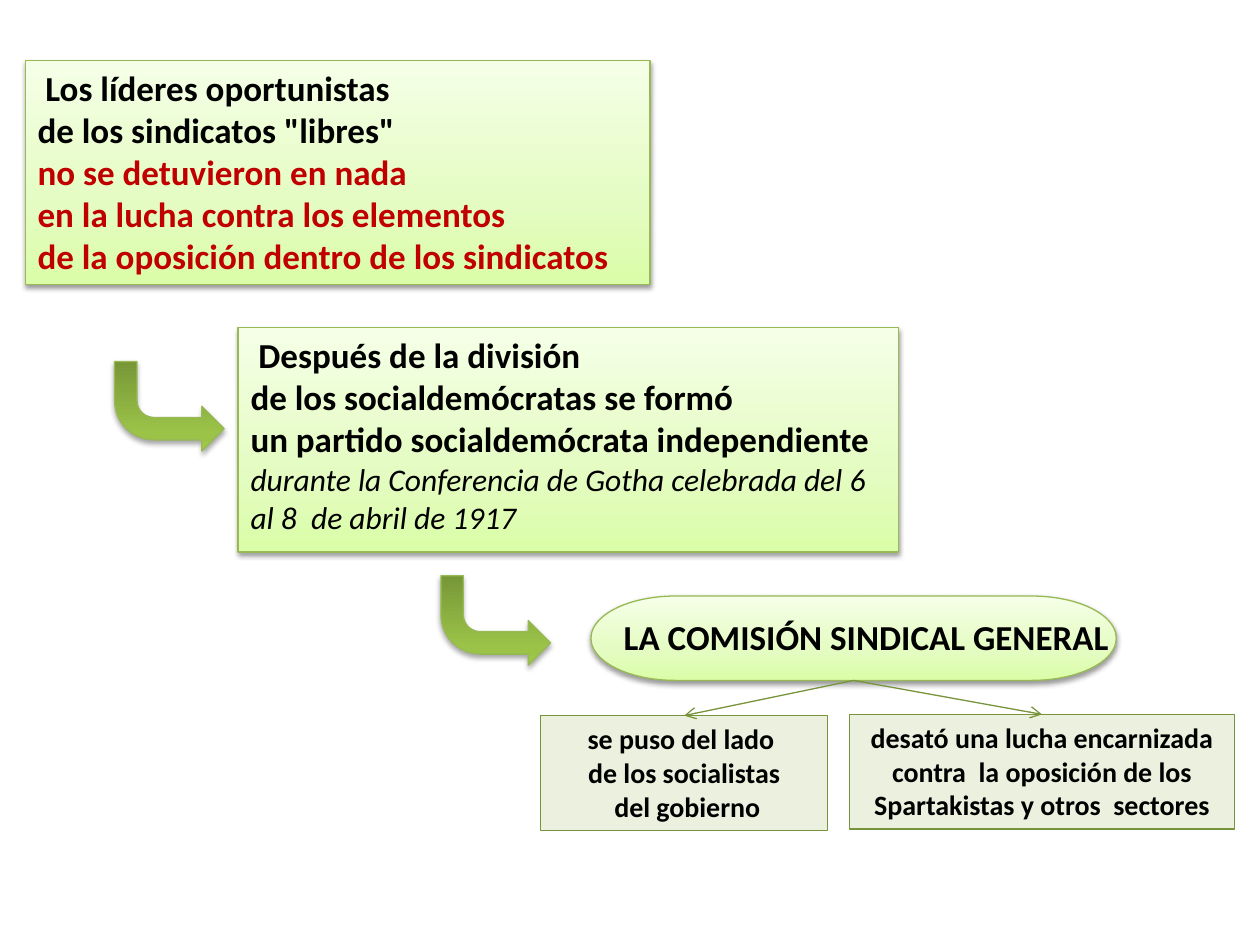
import lxml.etree
import pptx
import pptx.dml.color
import pptx.enum.shapes
import pptx.enum.text
import pptx.oxml
import pptx.oxml.ns
import pptx.util

SHAPES = pptx.enum.shapes.MSO_SHAPE
ALIGN = pptx.enum.text.PP_ALIGN
qn = pptx.oxml.ns.qn

COLORS = {
    "text": "000000",
    "stress": "C00000",
    "edge": "98B955",
    "outcome": "EBF1DE",
    "outcome_edge": "77933C",
}
PALE = [(0, "DAFDA7"), (35, "E4FCC2"), (100, "F5FFE7")]
LEAF = [(0, "779737"), (80, "9BC348"), (100, "9DC746")]

# fmt: off
LEADERS = [
    [(" Los líderes oportunistas", {})],
    [('de los sindicatos "libres"', {})],
    [("no se detuvieron en nada", {"color": "stress"})],
    [("en la lucha contra los elementos", {"color": "stress"})],
    [("de la oposición dentro de los sindicatos ", {"color": "stress"})],
]
PARTY = [
    [(" Después de la división", {})],
    [("de los socialdemócratas se formó", {})],
    [("un partido socialdemócrata independiente ", {}),
     ("durante la Conferencia de Gotha celebrada del 6 al 8  de abril de 1917",
      {"size": 18, "bold": False, "italic": True})],
]
COMMISSION = [[(" LA COMISIÓN SINDICAL GENERAL ", {})]]
SIDED = [
    [("se puso del lado ", {})],
    [("de los socialistas", {})],
    [(" del gobierno", {})],
]
FOUGHT = [[("desató una lucha encarnizada contra  la oposición de los "
            "Spartakistas y otros  sectores", {})]]
# fmt: on

STATEMENTS = [
    (LEADERS, (2, 6.4, 49.6, 23.73)),
    (PARTY, (18.9, 34.67, 52.4, 23.73)),
]
COMMISSION_PILL = (46.9, 63.07, 41.7, 8.93)
COMMISSION_LABEL = (47.6, 64.53, 41.7, 5.87)
OUTCOMES = [
    (SIDED, (42.9, 75.73, 22.8, 12.13)),
    (FOUGHT, (67.4, 75.6, 30.6, 12.13)),
]
STEP_ARROWS = [(9.1, 38.27, 8.7, 9.47), (35, 60.93, 8.7, 9.47)]

deck = pptx.Presentation()
deck.slide_width = pptx.util.Inches(10)
deck.slide_height = pptx.util.Inches(7.5)
slide = deck.slides.add_slide(deck.slide_layouts[6])


def place(percents):
    sides = (deck.slide_width, deck.slide_height) * 2
    return [round(side * percent / 100) for side, percent in zip(sides, percents)]


def rgb(name):
    return pptx.dml.color.RGBColor.from_string(COLORS[name])


def child(parent, tag, **attributes):
    element = lxml.etree.SubElement(parent, qn(tag))
    for key, value in attributes.items():
        element.set(key, str(value))
    return element


def write(shape, text, size=20, align=ALIGN.LEFT):
    frame = shape.text_frame
    frame.word_wrap = True
    frame.vertical_anchor = pptx.enum.text.MSO_ANCHOR.TOP
    for index, runs in enumerate(text):
        paragraph = frame.paragraphs[0] if index == 0 else frame.add_paragraph()
        paragraph.alignment = align
        for words, style in runs:
            run = paragraph.add_run()
            run.text = words
            run.font.name = "Calibri"
            run.font.size = pptx.util.Pt(style.get("size", size))
            run.font.bold = style.get("bold", True)
            run.font.italic = style.get("italic", False)
            run.font.color.rgb = rgb(style.get("color", "text"))


def add_block(preset, percents, edge):
    block = slide.shapes.add_shape(preset, *place(percents))
    block.line.color.rgb = rgb(edge)
    block.line.width = pptx.util.Pt(0.75)
    block.shadow.inherit = False
    return block


def add_glossy(preset, percents, stops, opacity, distance):
    block = add_block(preset, percents, "edge")
    block.fill.background()
    properties = block.element.spPr
    gradient = pptx.oxml.parse_xml(
        f'<a:gradFill {pptx.oxml.ns.nsdecls("a")} rotWithShape="1"/>'
    )
    stop_list = child(gradient, "a:gsLst")
    for position, color in stops:
        stop = child(stop_list, "a:gs", pos=position * 1000)
        child(stop, "a:srgbClr", val=color)
    child(gradient, "a:lin", ang=270 * 60000, scaled=0)
    properties.replace(properties.find(qn("a:noFill")), gradient)
    shade = child(
        properties.find(qn("a:effectLst")),
        "a:outerShdw",
        blurRad=pptx.util.Pt(3.1),
        dist=pptx.util.Pt(distance),
        dir=90 * 60000,
        rotWithShape=0,
    )
    child(child(shade, "a:srgbClr", val=COLORS["text"]), "a:alpha", val=opacity * 1000)
    return block


def add_link(source, target):
    link = slide.shapes.add_connector(
        pptx.enum.shapes.MSO_CONNECTOR.STRAIGHT, 0, 0, 0, 0
    )
    link.begin_connect(source, 2)
    link.end_connect(target, 0)
    link.line.color.rgb = rgb("outcome_edge")
    link.line.width = pptx.util.Pt(0.75)
    child(link.line._get_or_add_ln(), "a:tailEnd", type="arrow")
    child(link.element.spPr, "a:effectLst")


commission = add_glossy(SHAPES.FLOWCHART_TERMINATOR, COMMISSION_PILL, PALE, 38, 1.6)

for statement, percents in STATEMENTS:
    write(add_glossy(SHAPES.RECTANGLE, percents, PALE, 38, 1.6), statement)

label = slide.shapes.add_textbox(*place(COMMISSION_LABEL))
write(label, COMMISSION, align=ALIGN.CENTER)

outcomes = []
for outcome, percents in OUTCOMES:
    box = add_block(SHAPES.RECTANGLE, percents, "outcome_edge")
    box.fill.solid()
    box.fill.fore_color.rgb = rgb("outcome")
    write(box, outcome, size=16, align=ALIGN.CENTER)
    outcomes.append(box)

for percents in STEP_ARROWS:
    step = add_glossy(SHAPES.BENT_ARROW, percents, LEAF, 35, 1.8)
    step.element.spPr.find(qn("a:xfrm")).set("flipV", "1")

for box in outcomes:
    add_link(commission, box)

deck.save("out.pptx")
